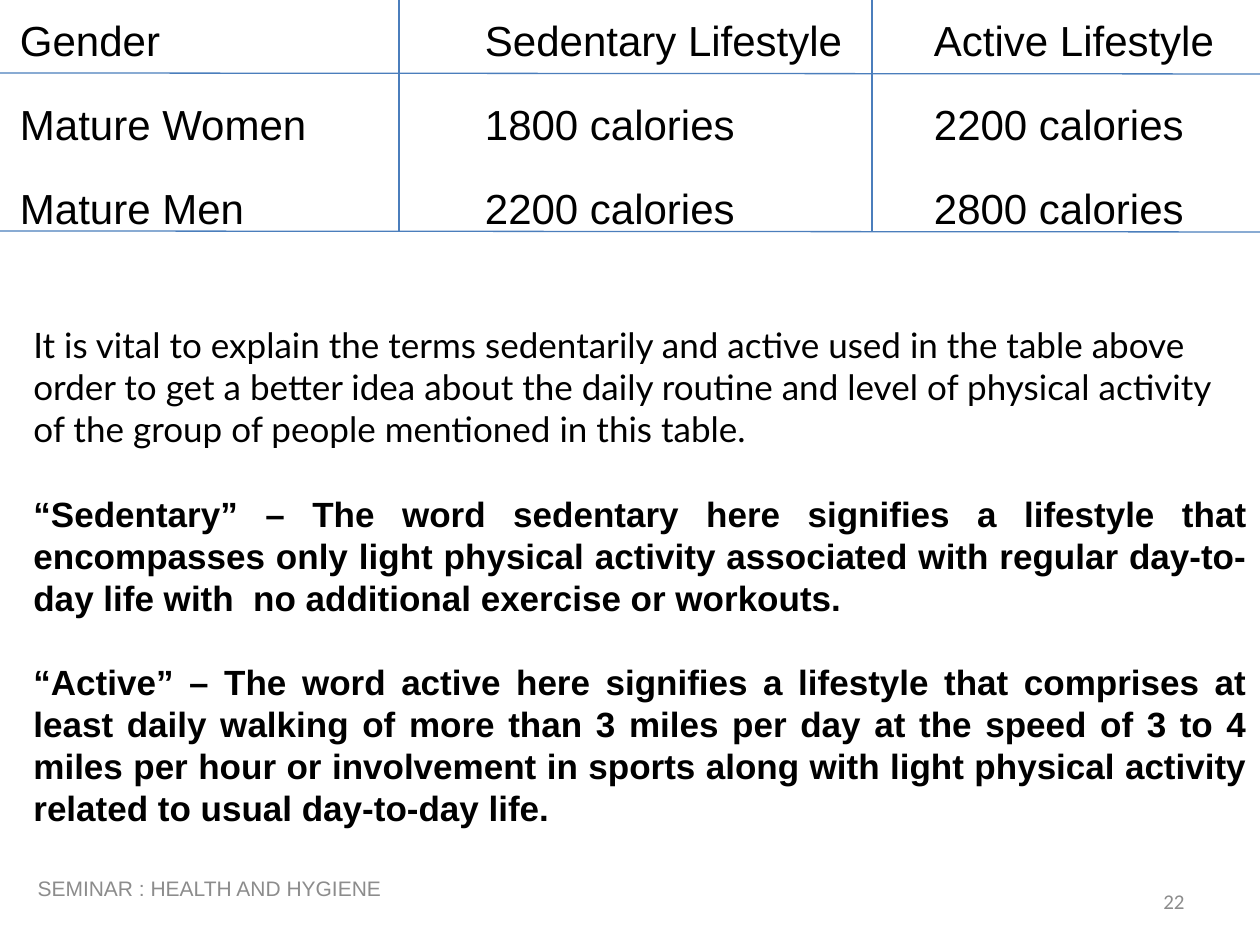
from lxml.etree import SubElement
from pptx import Presentation
from pptx.dml.color import RGBColor
from pptx.enum.shapes import MSO_CONNECTOR as Link
from pptx.enum.text import MSO_ANCHOR as Anchor, PP_ALIGN as Align
from pptx.oxml.ns import qn
from pptx.util import Emu, Pt

BLACK = RGBColor(0x00, 0x00, 0x00)
WHITE = RGBColor(0xFF, 0xFF, 0xFF)
GREY = RGBColor(0x8C, 0x8C, 0x8C)
BLUE = RGBColor(0x4B, 0x7E, 0xBC)

WIDE, HIGH = 1260, 945
ROWS = [
    ("Gender", "Sedentary Lifestyle", "Active Lifestyle"),
    ("Mature Women", "1800 calories", "2200 calories"),
    ("Mature Men", "2200 calories", "2800 calories"),
]
COLS = (465, 449, 346)
ROW = 84
RULES = [
    (0, 73, WIDE, 74),
    (0, 231, WIDE, 232),
    (399, 0, 399, 231),
    (872, 0, 872, 231),
]
INTRO = [
    "It is vital to explain the terms sedentarily and active used in the table above ",
    "order to get a better idea about the daily routine and level of physical activity ",
    "of the group of people mentioned in this table.",
]
TERMS = [
    "“Sedentary” – The word sedentary here signifies a lifestyle that encompasses "
    "only light physical activity associated with regular day-to-day life with  no "
    "additional exercise or workouts.",
    "“Active” – The word active here signifies a lifestyle that comprises at least "
    "daily walking of more than 3 miles per day at the speed of 3 to 4 miles per hour "
    "or involvement in sports along with light physical activity related to usual "
    "day-to-day life.",
]
FOOT = [
    ("SEMINAR : HEALTH AND HYGIENE", (10, 876, 399, 50), "Arial", Align.CENTER, Anchor.TOP, 0),
    ("22", (903, 876, 294, 50), "Calibri", Align.RIGHT, Anchor.MIDDLE, 6),
]


def px(n):
    return Emu(round(n * 914400 / 126))


def style(para, name, size, color, bold=False):
    font = para.font
    font.name, font.size, font.bold = name, Pt(size), bold
    font.color.rgb = color


def add_box(slide, area, anchor):
    frame = slide.shapes.add_textbox(*map(px, area)).text_frame
    frame.word_wrap = True
    frame.vertical_anchor = anchor
    return frame


def add_grid(slide):
    size = map(px, (0, 0, WIDE, ROW * len(ROWS)))
    table = slide.shapes.add_table(len(ROWS), len(COLS), *size).table
    table.first_row = table.horz_banding = False
    for col, width in zip(table.columns, COLS):
        col.width = px(width)
    for row, texts in zip(table.rows, ROWS):
        row.height = px(ROW)
        for cell, text in zip(row.cells, texts):
            cell.text = text
            cell.vertical_anchor = Anchor.MIDDLE
            cell.margin_left = cell.margin_right = px(20)
            cell.margin_top = cell.margin_bottom = px(9)
            cell.fill.solid()
            cell.fill.fore_color.rgb = WHITE
            style(cell.text_frame.paragraphs[0], "Arial", 24, BLACK)


def add_prose(slide):
    frame = add_box(slide, (21, 315, 1239, 522), Anchor.MIDDLE)
    frame.text = "\n".join(INTRO + TERMS)
    for i, para in enumerate(frame.paragraphs):
        term = i >= len(INTRO)
        para.alignment = Align.JUSTIFY
        para.line_spacing = Pt(24)
        para.space_before = Pt(24 if term else 0)
        style(para, "Arial" if term else "Lato", 20, BLACK, term)


def add_rules(slide):
    for ends in RULES:
        rule = slide.shapes.add_connector(Link.STRAIGHT, *map(px, ends))
        rule.line.color.rgb = BLUE
        rule.line.width = Pt(0.75)
        SubElement(rule._element.spPr, qn("a:effectLst"))


def add_foot(slide):
    for text, area, name, align, anchor, top in FOOT:
        frame = add_box(slide, area, anchor)
        frame.margin_top = px(top)
        frame.text = text
        para = frame.paragraphs[0]
        para.alignment = align
        style(para, name, 12, GREY)


def main():
    deck = Presentation()
    deck.slide_width, deck.slide_height = px(WIDE), px(HIGH)
    slide = deck.slides.add_slide(deck.slide_layouts[6])
    add_foot(slide)
    add_grid(slide)
    add_prose(slide)
    add_rules(slide)
    deck.save("out.pptx")


if __name__ == "__main__":
    main()
